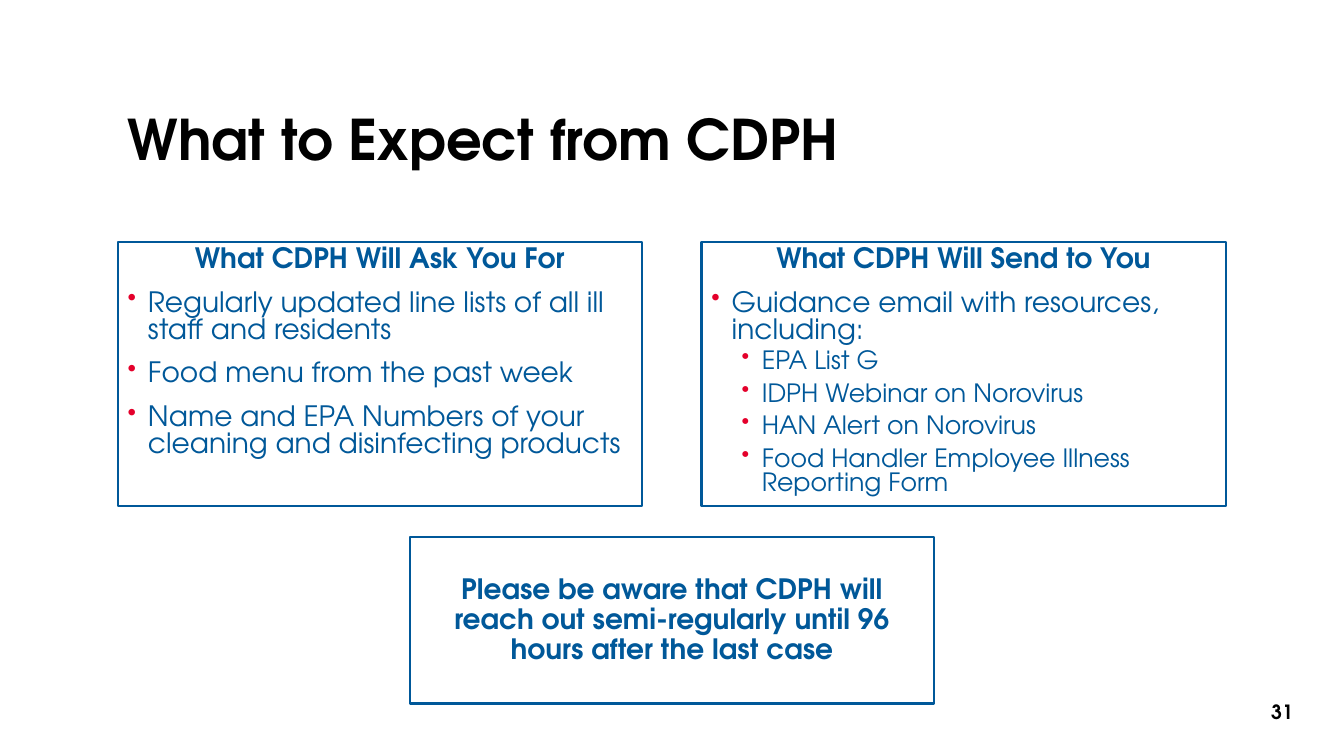
from lxml.etree import SubElement
from pptx import Presentation
from pptx.dml.color import RGBColor
from pptx.enum.shapes import MSO_SHAPE as Shape
from pptx.enum.text import MSO_ANCHOR as Anchor, PP_ALIGN as Align
from pptx.oxml.ns import qn
from pptx.util import Cm, Pt

FONT = "TeX Gyre Adventor"
COLORS = {"black": "000000", "blue": "005899", "red": "E4002B"}

PAGE_WIDTH, PAGE_HEIGHT = 33.87, 19.05
LEFT = 2.97
BOX_WIDTH = 13.21
LIST_TOP, LIST_HEIGHT = 6.1, 6.65
LIST_STEP = BOX_WIDTH + 1.5
# Text indent, size, space before and space after for each bullet level
LEVELS = [(0.51, 20, 12, 0), (1.27, 18, 4, 2)]
HANGING = 0.51

LISTS = [
    ("What CDPH Will Ask You For", [
        (0, "Regularly updated line lists of all ill staff and residents"),
        (0, "Food menu from the past week"),
        (0, "Name and EPA Numbers of your cleaning and disinfecting products"),
    ]),
    ("What CDPH Will Send to You", [
        (0, "Guidance email with resources, including:"),
        (1, "EPA List G"),
        (1, "IDPH Webinar on Norovirus"),
        (1, "HAN Alert on Norovirus"),
        (1, "Food Handler Employee Illness Reporting Form"),
    ]),
]


def color(name):
    return RGBColor.from_string(COLORS[name])


def write(para, text, size, ink, bold=True, align=Align.LEFT, spacing=1.0):
    para.text = text
    para.alignment = align
    para.line_spacing = spacing
    for span in para.runs:
        span.font.name = FONT
        span.font.size = Pt(size)
        span.font.bold = bold
        span.font.color.rgb = color(ink)


def add_bullet(para, indent):
    props = para._p.get_or_add_pPr()
    props.set("marL", str(Cm(indent)))
    props.set("indent", str(-Cm(HANGING)))
    bullet_color = SubElement(props, qn("a:buClr"))
    SubElement(bullet_color, qn("a:srgbClr"), val=COLORS["red"])
    SubElement(props, qn("a:buSzPct"), val="90000")
    SubElement(props, qn("a:buChar"), char="•")


def add_label(page, left, top, width, height, text, size, **style):
    box = page.shapes.add_textbox(Cm(left), Cm(top), Cm(width), Cm(height))
    frame = box.text_frame
    frame.word_wrap = True
    frame.vertical_anchor = Anchor.MIDDLE
    write(frame.paragraphs[0], text, size, "black", **style)


def add_frame(page, left, top, height, anchor):
    """Add an outlined box and return its text frame."""
    box = page.shapes.add_shape(
        Shape.RECTANGLE, Cm(left), Cm(top), Cm(BOX_WIDTH), Cm(height))
    box.shadow.inherit = False
    box.fill.background()
    box.line.color.rgb = color("blue")
    box.line.width = Pt(1.5)
    frame = box.text_frame
    frame.word_wrap = True
    frame.vertical_anchor = anchor
    return frame


def add_list(page, left, heading, items):
    frame = add_frame(page, left, LIST_TOP, LIST_HEIGHT, Anchor.TOP)
    write(frame.paragraphs[0], heading, 20, "blue",
          align=Align.CENTER, spacing=0.8)
    for level, text in items:
        indent, size, before, after = LEVELS[level]
        para = frame.add_paragraph()
        para.level = level
        add_bullet(para, indent)
        write(para, text, size, "blue", bold=False, spacing=0.8)
        para.space_before = Pt(before)
        para.space_after = Pt(after)


def add_notice(page, text):
    frame = add_frame(page, (PAGE_WIDTH - BOX_WIDTH) / 2, 13.54, 4.19,
                      Anchor.MIDDLE)
    frame.margin_left = frame.margin_right = Cm(0.8)
    write(frame.paragraphs[0], text, 20, "blue",
          align=Align.CENTER, spacing=0.9)


def main():
    deck = Presentation()
    deck.slide_width, deck.slide_height = Cm(PAGE_WIDTH), Cm(PAGE_HEIGHT)
    page = deck.slides.add_slide(deck.slide_layouts[6])
    add_label(page, LEFT, 1.35, 27.94, 4.47, "What to Expect from CDPH", 40,
              spacing=0.9)
    for column, (heading, items) in enumerate(LISTS):
        add_list(page, LEFT + column * LIST_STEP, heading, items)
    add_notice(page, "Please be aware that CDPH will reach out semi-regularly "
                     "until 96 hours after the last case")
    add_label(page, 31.42, 17.42, 1.78, 1.02, "31", 14, align=Align.CENTER)
    deck.save("out.pptx")


if __name__ == "__main__":
    main()
